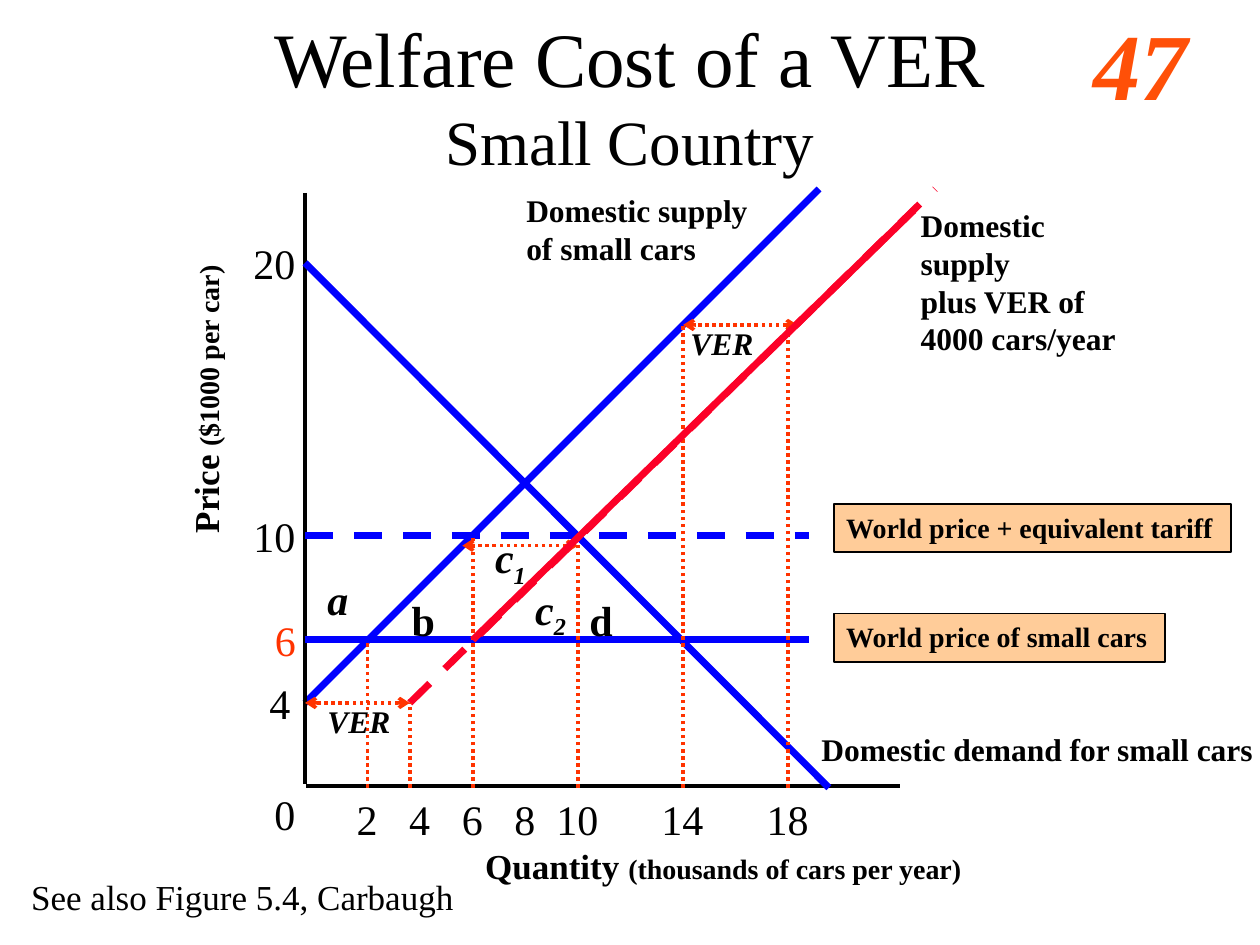
from dataclasses import dataclass
from typing import Optional

from lxml.etree import SubElement as Sub
from pptx import Presentation
from pptx.dml.color import RGBColor as Rgb
from pptx.enum.dml import MSO_LINE as Dash
from pptx.enum.shapes import MSO_CONNECTOR as Conn, MSO_SHAPE as Form
from pptx.enum.text import MSO_ANCHOR as Anchor, MSO_AUTO_SIZE as Fit, PP_ALIGN as Align
from pptx.oxml.ns import qn
from pptx.util import Cm, Pt


@dataclass(frozen=True)
class Theme:
    font: str = "Times New Roman"
    black: str = "000000"
    blue: str = "0000FF"
    red: str = "FC0128"
    dot: str = "FF3300"
    page: str = "FF5008"
    box: str = "FFCC99"
    head: int = 44
    sub: int = 36
    num: int = 54
    tick: int = 24
    axis: int = 20
    note: int = 18
    unit: int = 16


T = Theme()


@dataclass
class Run:
    text: str
    size: float = T.tick
    bold: bool = False
    slant: bool = False
    color: str = T.black
    base: int = 0


@dataclass
class Label:
    lines: list[list[Run]]
    left: float
    top: float
    width: float
    height: float = 1.27
    turn: int = 0
    wrap: bool = False
    fill: Optional[str] = None


@dataclass
class Line:
    x1: float
    y1: float
    x2: float
    y2: float
    color: str
    width: float = 4
    dash: Optional[Dash] = None
    arrows: bool = False


def add_run(par, run: Run) -> None:
    item = par.add_run()
    item.text = run.text
    font = item.font
    font.name, font.size = T.font, Pt(run.size)
    font.bold, font.italic = run.bold, run.slant
    font.color.rgb = Rgb.from_string(run.color)
    if run.base:
        item.font._element.set("baseline", str(run.base * 1000))


def add_label(slide, label: Label) -> None:
    area = [Cm(v) for v in (label.left, label.top, label.width, label.height)]
    if label.fill:
        shape = slide.shapes.add_shape(Form.RECTANGLE, *area)
        shape.shadow.inherit = False
        shape.fill.solid()
        shape.fill.fore_color.rgb = Rgb.from_string(label.fill)
        shape.line.color.rgb = Rgb.from_string(T.black)
        shape.line.width = Pt(1)
    else:
        shape = slide.shapes.add_textbox(*area)
    shape.rotation = label.turn
    frame = shape.text_frame
    frame.word_wrap = label.wrap
    frame.auto_size = Fit.SHAPE_TO_FIT_TEXT
    frame.vertical_anchor = Anchor.TOP
    for i, runs in enumerate(label.lines):
        par = frame.add_paragraph() if i else frame.paragraphs[0]
        par.alignment = Align.LEFT
        for run in runs:
            add_run(par, run)


def add_line(slide, line: Line) -> None:
    ends = [Cm(v) for v in (line.x1, line.y1, line.x2, line.y2)]
    con = slide.shapes.add_connector(Conn.STRAIGHT, *ends)
    con.line.color.rgb = Rgb.from_string(line.color)
    con.line.width = Pt(line.width)
    if line.dash:
        con.line.dash_style = line.dash
    prop = con.element.spPr
    if line.arrows:
        for end in ("a:headEnd", "a:tailEnd"):
            Sub(prop.find(qn("a:ln")), qn(end), type="arrow")
    Sub(prop, qn("a:effectLst"))


def add_title(slide) -> None:
    title = slide.shapes.title
    title.left, title.top, title.width, title.height = Cm(1.9), Cm(0), Cm(21.6), Cm(3.81)
    frame = title.text_frame
    frame.auto_size, frame.vertical_anchor = Fit.NONE, Anchor.MIDDLE
    par = frame.paragraphs[0]
    par.alignment = Align.CENTER
    add_run(par, Run("Welfare Cost of a VER", T.head))
    par.add_line_break()
    add_run(par, Run("Small Country", T.sub))


# Plot frame, and the heights of the prices that are marked
LEFT, BASE, EDGE = 6.15, 15.88, 16.31
HIGH = {20: 5.3, 10: 10.8, 6: 12.9, 4: 14.17}
VER_Y, CAP_Y, LOW_X = 6.55, 11.0, 8.26


def at_q(amount: float) -> float:
    return 6.35 + 0.53 * amount


def bold(text: str, size: float = T.note, slant: bool = False, base: int = 0) -> Run:
    return Run(text, size, True, slant, base=base)


def dots(x1: float, y1: float, x2: float, y2: float, arrows: bool = False) -> Line:
    return Line(x1, y1, x2, y2, T.dot, 2, Dash.ROUND_DOT, arrows)


def wide(text: str) -> float:
    return 0.51 + 0.43 * len(text)


def main() -> None:
    deck = Presentation()
    deck.slide_width, deck.slide_height = Cm(25.4), Cm(19.05)
    slide = deck.slides.add_slide(deck.slide_layouts[5])
    add_title(slide)

    # Axes, curves and price levels
    lines = [
        Line(LEFT, HIGH[4], 16.51, 3.81, T.blue),
        Line(LEFT, 3.89, LEFT, 15.8, T.black, 2),
        Line(6.17, 15.85, 18.14, 15.85, T.black, 2),
        Line(LEFT, HIGH[20], 16.71, BASE, T.blue),
        Line(LEFT, HIGH[6], EDGE, HIGH[6], T.blue),
        Line(LEFT, HIGH[10], EDGE, HIGH[10], T.blue, dash=Dash.DASH),
        Line(LOW_X, HIGH[4], 18.85, 3.81, T.red, dash=Dash.DASH),
    ]
    # Dotted drops to the quantity axis, then the VER spans
    drops = [(at_q(2), HIGH[6]), (LOW_X, HIGH[4]), (at_q(6), HIGH[10]),
             (at_q(10), HIGH[10]), (at_q(14), VER_Y), (at_q(18), VER_Y)]
    lines += [dots(x, BASE, x, y) for x, y in drops]
    spans = [(LOW_X, LEFT, HIGH[4]), (at_q(10), 9.32, CAP_Y), (16.08, at_q(14), VER_Y)]
    lines += [dots(x1, y, x2, y, True) for x1, x2, y in spans]
    lines.append(Line(at_q(6), HIGH[6], 18.42, 4.24, T.red))
    for line in lines:
        add_line(slide, line)

    # Tick labels, centred on their values
    labels = [Label([[Run("0")]], 5.28, 15.77, wide("0"))]
    for amount in (2, 4, 6, 8, 10, 14, 18):
        text = str(amount)
        labels.append(Label([[Run(text)]], at_q(amount) - wide(text) / 2, BASE, wide(text)))
    for price, y in HIGH.items():
        text = str(price)
        color = T.dot if price == 6 else T.black
        right = 6.12 if price == 4 else 6.23
        labels.append(Label([[Run(text, color=color)]], right - wide(text), y - 0.64, wide(text)))

    # Welfare areas
    labels += [
        Label([[bold("a", T.tick, True)]], 6.35, 11.43, 0.94),
        Label([[bold("b", T.tick)]], 8.05, 11.86, 0.97),
        Label([[bold("d", T.tick)]], 11.63, 11.86, 0.97),
    ]
    for sub, x, y in (("1", 9.73, 10.59), ("2", 10.54, 11.63)):
        runs = [bold("c", T.tick, True), bold(sub, T.tick, True, -25)]
        labels.append(Label([runs], x, y, 1.17))
    for x, y in ((13.67, 6.4), (6.35, 14.02)):
        labels.append(Label([[bold("VER", slant=True)]], x, y, 1.78, 1.02))

    # Curve names, axis names and price tags
    labels += [
        Label([[bold("Domestic demand for small cars")]], 16.31, 14.6, 9.22, 1.02),
        Label([[bold("Domestic supply")], [bold("of small cars")]], 10.36, 3.73, 4.98, 1.78),
        Label([[bold("Domestic supply")], [bold("plus VER of")], [bold("4000 cars/year")]],
              18.31, 4.03, 4.7, 3.05, wrap=True),
        Label([[bold("Quantity ", T.axis), bold("(thousands of cars per year)", T.unit)]],
              9.53, 16.89, 10.13, 1.09),
        Label([[bold("Price ", T.axis), bold("($1000 per car)", T.unit)]],
              1.17, 7.49, 5.92, 1.09, turn=270),
        Label([[bold("World price of small cars", T.unit)]], 16.81, 12.37, 6.68, 0.97, fill=T.box),
        Label([[bold("World price + equivalent tariff", T.unit)]], 16.81, 10.16, 8, 0.97, fill=T.box),
        Label([[Run("See also Figure 5.4, Carbaugh", T.axis)]], 0.38, 17.53, 9.4, 1.09, wrap=True),
        Label([[Run("47", T.num, True, True, T.page)]], 21.79, 0, 3.38, 2.54, wrap=True),
    ]
    for label in labels:
        add_label(slide, label)
    deck.save("out.pptx")


if __name__ == "__main__":
    main()
